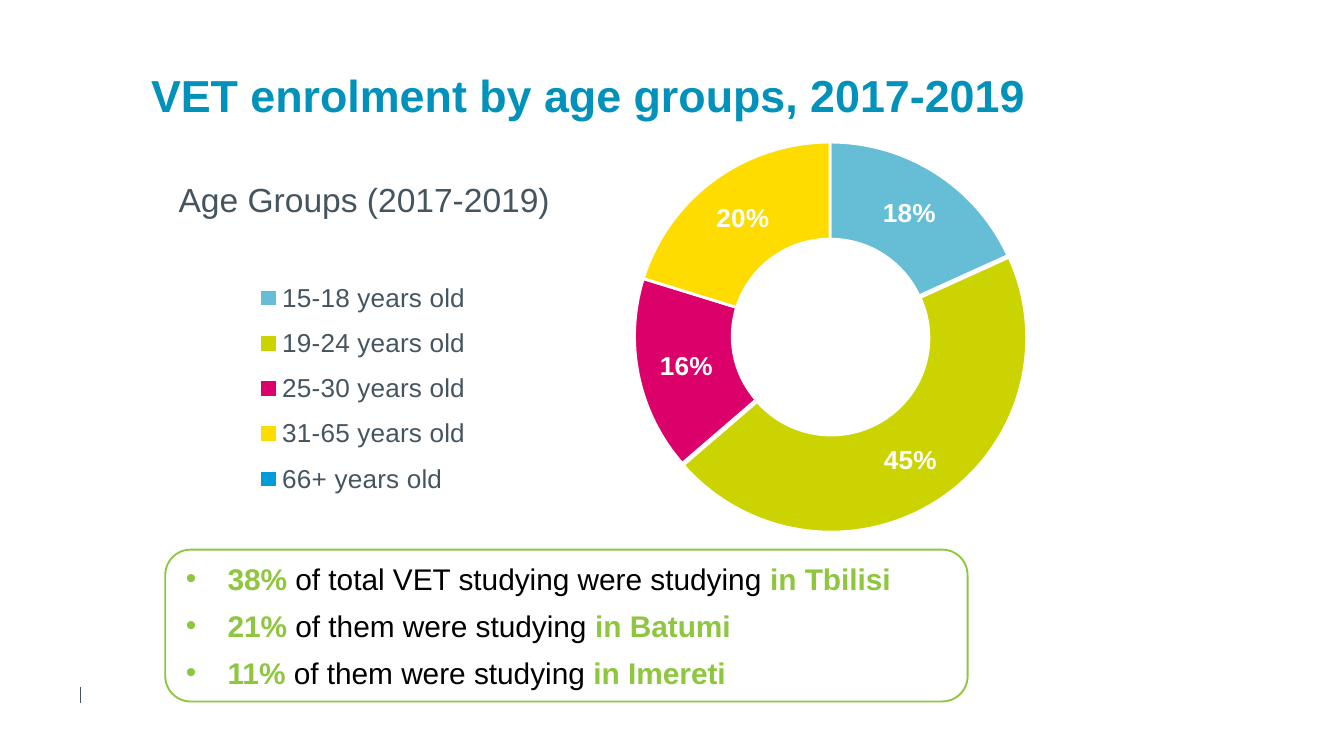
from dataclasses import dataclass

from lxml.etree import SubElement
from pptx import Presentation
from pptx.chart.data import CategoryChartData
from pptx.dml.color import RGBColor
from pptx.enum.chart import XL_CHART_TYPE, XL_LEGEND_POSITION
from pptx.enum.shapes import MSO_CONNECTOR, MSO_SHAPE
from pptx.enum.text import MSO_ANCHOR, PP_ALIGN
from pptx.oxml import parse_xml
from pptx.oxml.ns import nsdecls, qn
from pptx.util import Inches, Pt


@dataclass(frozen=True)
class Theme:
    """Colours, font and type sizes of the slide."""
    font: str = "Arial"
    blue: str = "0092BB"
    grey: str = "455560"
    green: str = "8EC63F"
    black: str = "000000"
    white: str = "FFFFFF"
    slices: tuple = ("66BED6", "CBD300", "DC006B", "FFDC00", "009CDA")
    head: int = 24
    sub: int = 18
    body: int = 16
    label: int = 14


THEME = Theme()
AGES = {"15-18 years old": 0.18, "19-24 years old": 0.45, "25-30 years old": 0.16,
        "31-65 years old": 0.2, "66+ years old": 0}
FACTS = [("38% ", "of total VET studying were studying ", "in Tbilisi"),
         ("21% ", "of them were studying ", "in Batumi"),
         ("11% ", "of them were studying ", "in Imereti")]


def style(font, size, color, bold=False):
    """Set face, size, colour and weight of a font."""
    font.name, font.size, font.bold = THEME.font, Pt(size), bold
    font.color.rgb = RGBColor.from_string(color)


def write(para, text, size, color, bold=False):
    """Add one styled run to a paragraph."""
    run = para.add_run()
    run.text = text
    style(run.font, size, color, bold)


def place(node, **spots):
    """Give a chart part a manual layout in fractions of the chart."""
    for old in node.findall(qn("c:layout")):
        node.remove(old)
    inner = '<c:layoutTarget val="inner"/>' if node.tag == qn("c:plotArea") else ""
    modes = "".join(f'<c:{key}Mode val="edge"/>' for key in "xy")
    sizes = "".join(f'<c:{key} val="{val}"/>' for key, val in spots.items())
    layout = parse_xml(f'<c:layout {nsdecls("c")}><c:manualLayout>{inner}{modes}{sizes}'
                       '</c:manualLayout></c:layout>')
    over = node.find(qn("c:overlay"))
    if over is None:
        node.insert(0, layout)
    else:
        over.addprevious(layout)


def add_title(slide, box):
    """Place and format the slide title."""
    title = slide.shapes.title
    title.left, title.top, title.width, title.height = map(Inches, box)
    frame = title.text_frame
    frame.vertical_anchor = MSO_ANCHOR.TOP
    para = frame.paragraphs[0]
    para.alignment, para.line_spacing = PP_ALIGN.CENTER, 0.9
    write(para, "VET enrolment by age groups, 2017-2019", THEME.head, THEME.blue, True)


def add_ring(slide, box):
    """Add the doughnut chart with its heading and legend."""
    data = CategoryChartData(number_format="0%")
    data.categories = list(AGES)
    data.add_series("Series 1", list(AGES.values()))
    chart = slide.shapes.add_chart(XL_CHART_TYPE.DOUGHNUT, *map(Inches, box), data).chart
    style(chart.font, 10, THEME.black)

    chart.has_title = True
    head = chart.chart_title
    write(head.text_frame.paragraphs[0], "Age Groups (2017-2019)", THEME.sub, THEME.grey)
    place(head._element, x=0.03, y=0.14)

    chart.has_legend = True
    legend = chart.legend
    legend.position = XL_LEGEND_POSITION.BOTTOM
    legend.include_in_layout = False
    style(legend.font, THEME.label, THEME.grey)
    place(legend._element, x=0.08, y=0.37, w=0.28, h=0.58)

    place(chart._chartSpace.chart.plotArea, x=0.41, y=0.07, w=0.55, h=0.93)
    plot = chart.plots[0]
    plot.vary_by_categories = True
    series = plot.series[0]
    labels = series.data_labels
    labels.show_value, labels.show_percentage = True, False
    labels.number_format, labels.number_format_is_linked = "0%", False
    style(labels.font, THEME.label, THEME.white, True)

    for spot, color in enumerate(THEME.slices):
        form = series.points[spot].format
        form.fill.solid()
        form.fill.fore_color.rgb = RGBColor.from_string(color)
        form.line.color.rgb = RGBColor.from_string(THEME.white)
        form.line.width = Pt(1.5)
    wide = series._element.findall(qn("c:dPt"))[1]
    wide.find(qn("c:spPr")).addprevious(
        parse_xml(f'<c:explosion {nsdecls("c")} val="2"/>'))


def add_facts(slide, box):
    """Add the rounded panel with its bulleted facts."""
    panel = slide.shapes.add_shape(MSO_SHAPE.FLOWCHART_ALTERNATE_PROCESS,
                                   *map(Inches, box))
    panel.shadow.inherit = False
    panel.fill.solid()
    panel.fill.fore_color.rgb = RGBColor.from_string(THEME.white)
    panel.line.color.rgb = RGBColor.from_string(THEME.green)
    panel.line.width = Pt(1)
    frame = panel.text_frame
    frame.word_wrap = True
    frame.vertical_anchor = MSO_ANCHOR.MIDDLE
    for row, fact in enumerate(FACTS):
        para = frame.add_paragraph() if row else frame.paragraphs[0]
        para.alignment = PP_ALIGN.LEFT
        if row < len(FACTS) - 1:
            para.space_after = Pt(6)
        props = para._p.get_or_add_pPr()
        props.set("marL", str(Inches(0.31)))
        props.set("indent", str(-Inches(0.31)))
        SubElement(props, qn("a:buFont"), typeface=THEME.font)
        SubElement(props, qn("a:buChar"), char="•")
        for text, bold in zip(fact, (True, False, True)):
            write(para, text, THEME.body, THEME.green if bold else THEME.black, bold)


def add_tick(slide, box):
    """Add the thin upright footer line."""
    left, top, width, height = box
    line = slide.shapes.add_connector(MSO_CONNECTOR.STRAIGHT, Inches(left), Inches(top),
                                      Inches(left + width), Inches(top + height))
    line.line.color.rgb = RGBColor.from_string(THEME.grey)
    line.line.width = Pt(0.25)
    SubElement(line._element.spPr, qn("a:effectLst"))


def main():
    """Build and save the slide."""
    deck = Presentation()
    deck.slide_width, deck.slide_height = Inches(10), Inches(10 * 9 / 16)
    slide = deck.slides.add_slide(deck.slide_layouts[5])
    add_tick(slide, (0.6, 5.11, 0, 0.12))
    add_title(slide, (0, 0.5, 8.75, 0.53))
    add_facts(slide, (1.23, 4.09, 5.97, 1.13))
    add_ring(slide, (1.06, 0.84, 7.47, 3.13))
    deck.save("out.pptx")


if __name__ == "__main__":
    main()
